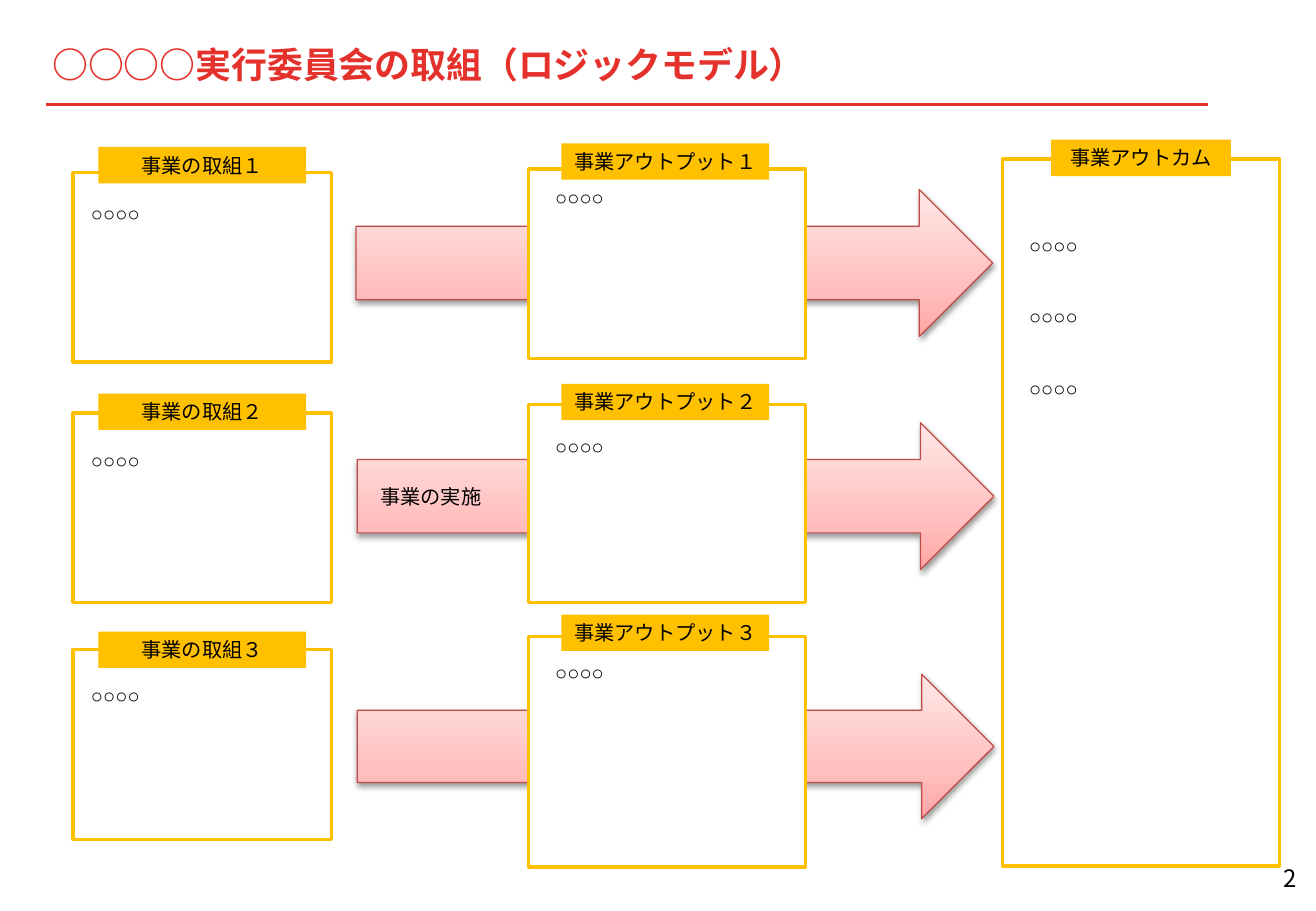
from lxml import etree
from pptx import Presentation
from pptx.dml.color import RGBColor
from pptx.enum.shapes import MSO_CONNECTOR, MSO_SHAPE
from pptx.enum.text import MSO_ANCHOR, PP_ALIGN
from pptx.oxml import parse_xml
from pptx.oxml.ns import nsdecls, qn
from pptx.util import Inches, Pt

RED = RGBColor(0xE4, 0x31, 0x2B)
AMBER = RGBColor(0xFF, 0xC0, 0x00)
ARROW_EDGE = RGBColor(0xBF, 0x4C, 0x48)
WHITE = RGBColor(0xFF, 0xFF, 0xFF)
BLACK = RGBColor(0x00, 0x00, 0x00)
ARROW_STOPS = [(0, "FFA6A5"), (35, "FFC0BF"), (100, "FFE7E7")]
CIRCLES = "○○○○"
GOTHIC = "Noto Sans CJK JP"


def write(tf, text, size=12, font="Arial", color=BLACK, bold=False,
          align=PP_ALIGN.LEFT, anchor=MSO_ANCHOR.TOP, gap=0, wrap=True, inset=True):
    """Fill a text frame, one paragraph per line, with gap points between them."""
    tf.word_wrap = wrap
    tf.vertical_anchor = anchor
    if not inset:
        tf.margin_left = tf.margin_right = tf.margin_top = tf.margin_bottom = 0
    for i, line in enumerate(text.split("\n")):
        p = tf.paragraphs[0] if i == 0 else tf.add_paragraph()
        p.alignment = align
        if i and gap:
            p.space_before = Pt(gap)
        r = p.add_run()
        r.text = line
        r.font.size = Pt(size)
        r.font.name = font
        r.font.bold = bold
        r.font.color.rgb = color
        if font == GOTHIC:
            etree.SubElement(r.font._element, qn("a:ea"), typeface=font)


class LogicModel:
    def __init__(self, prs):
        self.s = prs.slides.add_slide(prs.slide_layouts[6])

    def text(self, x, y, w, h, text, **fmt):
        sp = self.s.shapes.add_textbox(Inches(x), Inches(y), Inches(w), Inches(h))
        write(sp.text_frame, text, **fmt)

    def shape(self, kind, x, y, w, h, fill=None, line=None, width=2):
        sp = self.s.shapes.add_shape(kind, Inches(x), Inches(y), Inches(w), Inches(h))
        sp.shadow.inherit = False
        if fill is not None:
            sp.fill.solid()
            sp.fill.fore_color.rgb = fill
        if line is None:
            sp.line.fill.background()
        else:
            sp.line.color.rgb = line
            sp.line.width = Pt(width)
        return sp

    def rule(self, x1, x2, y):
        sp = self.s.shapes.add_connector(
            MSO_CONNECTOR.STRAIGHT, Inches(x1), Inches(y), Inches(x2), Inches(y))
        sp.line.color.rgb = RED
        sp.line.width = Pt(2)
        etree.SubElement(sp._element.spPr, qn("a:effectLst"))

    def arrow(self, x, y, w, h):
        sp = self.shape(MSO_SHAPE.RIGHT_ARROW, x, y, w, h, line=ARROW_EDGE, width=0.75)
        spPr = sp._element.spPr
        stops = "".join(f'<a:gs pos="{pos * 1000}"><a:srgbClr val="{c}"/></a:gs>'
                        for pos, c in ARROW_STOPS)
        spPr.find(qn("a:prstGeom")).addnext(parse_xml(
            f'<a:gradFill {nsdecls("a")} rotWithShape="1"><a:gsLst>{stops}</a:gsLst>'
            '<a:lin ang="16200000" scaled="0"/></a:gradFill>'))
        spPr.find(qn("a:effectLst")).append(parse_xml(
            f'<a:outerShdw {nsdecls("a")} blurRad="{Pt(3.1)}" dist="{Pt(1.6)}" '
            'dir="5400000" rotWithShape="0"><a:srgbClr val="000000">'
            '<a:alpha val="38000"/></a:srgbClr></a:outerShdw>'))

    def card(self, x, y, w, h, label, label_x, label_y, label_w, body_x, body_y,
             body=CIRCLES, body_h=0.3, gap=0):
        self.shape(MSO_SHAPE.RECTANGLE, x, y, w, h, fill=WHITE, line=AMBER)
        sp = self.shape(MSO_SHAPE.RECTANGLE, label_x, label_y, label_w, 0.3, fill=AMBER)
        write(sp.text_frame, label, align=PP_ALIGN.CENTER)
        self.text(body_x, body_y, 2.03, body_h, body, gap=gap)


def main():
    prs = Presentation()
    prs.slide_width, prs.slide_height = Inches(10.83), Inches(7.5)
    model = LogicModel(prs)

    # Title, rule and page number
    model.rule(0.38, 9.94, 0.86)
    model.text(0.43, 0.21, 9.39, 0.64, "○○○○実行委員会の取組（ロジックモデル）", size=21.3,
               font=GOTHIC, color=RED, bold=True, anchor=MSO_ANCHOR.MIDDLE, inset=False)
    model.text(10.45, 7.14, 0.22, 0.21, "2", size=14.2, font=GOTHIC, wrap=False,
               align=PP_ALIGN.RIGHT, anchor=MSO_ANCHOR.BOTTOM, inset=False)

    # Arrows behind the cards
    for x, y, h in [(2.93, 1.56, 1.21), (2.94, 3.48, 1.21), (2.94, 5.55, 1.19)]:
        model.arrow(x, y, 5.24, h)
    model.text(3.03, 3.94, 1.81, 0.3, "事業の実施")

    # Activities: card top, label top, body top
    activities = [(1.42, 1.21, 1.61), (3.4, 3.24, 3.64), (5.35, 5.2, 5.58)]
    for number, (y, label_y, body_y) in zip("１２３", activities):
        model.card(0.6, y, 2.13, 1.56, f"事業の取組{number}",
                   0.81, label_y, 1.71, 0.65, body_y)

    # Outputs: card top, card height, label top, body top
    outputs = [(1.39, 1.56, 1.18, 1.48), (3.33, 1.63, 3.16, 3.53), (5.24, 1.9, 5.06, 5.39)]
    for number, (y, h, label_y, body_y) in zip("１２３", outputs):
        model.card(4.35, y, 2.28, h, f"事業アウトプット{number}",
                   4.62, label_y, 1.71, 4.47, body_y)

    # Outcome
    model.card(8.25, 1.31, 2.28, 5.82, "事業アウトカム", 8.65, 1.15, 1.48, 8.37, 1.87,
               body="\n".join([CIRCLES] * 3), body_h=4.95, gap=28)

    prs.save("out.pptx")


if __name__ == "__main__":
    main()
